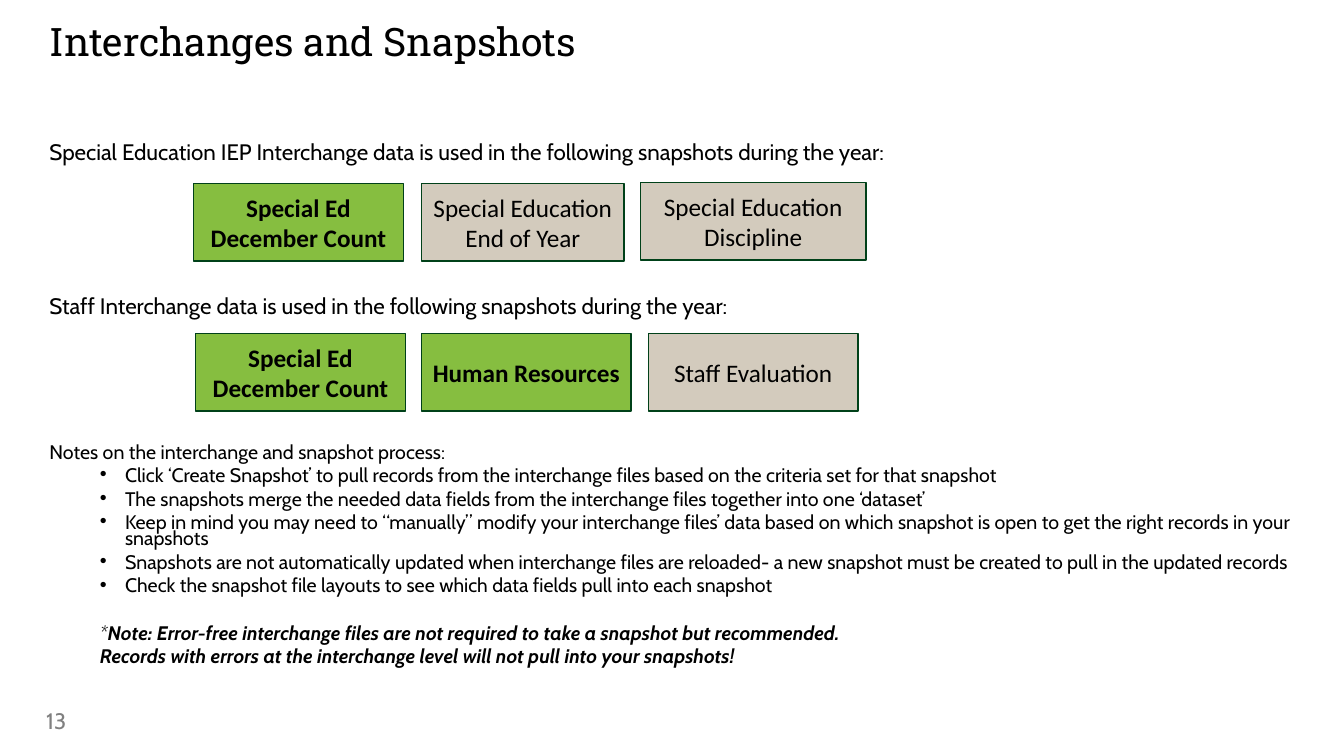
from lxml import etree
from pptx import Presentation
from pptx import util as u
from pptx.dml.color import RGBColor
from pptx.enum import shapes, text
from pptx.oxml.ns import qn

COLOURS = {"black": "000000", "grey": "808080", "green": "86BE40",
           "beige": "D3CBBD", "border": "004119"}
BOX_HEIGHT = 0.77
SNAPSHOTS = [
    (1.92, 1.82, 2.08, "Special Ed December Count", True),
    (4.18, 1.82, 2.01, "Special Education End of Year", False),
    (6.35, 1.81, 2.24, "Special Education Discipline", False),
    (1.94, 3.31, 2.08, "Special Ed December Count", True),
    (4.18, 3.31, 2.08, "Human Resources", True),
    (6.43, 3.31, 2.08, "Staff Evaluation", False),
]
NOTES = [
    "Click ‘Create Snapshot’ to pull records from the interchange files based on the criteria set for that snapshot",
    "The snapshots merge the needed data fields from the interchange files together into one ‘dataset’",
    "Keep in mind you may need to “manually” modify your interchange files’ data based on which snapshot is open "
    "to get the right records in your snapshots",
    "Snapshots are not automatically updated when interchange files are reloaded- a new snapshot must be created "
    "to pull in the updated records",
    "Check the snapshot file layouts to see which data fields pull into each snapshot",
]


def colour(name):
    """Return the named colour."""
    return RGBColor.from_string(COLOURS[name])


def add_run(paragraph, content, size=14, font="Cabin", fill="black", bold=False, italic=False):
    """Add formatted text to a paragraph."""
    run = paragraph.add_run()
    run.text = content
    run.font.size = u.Pt(size)
    run.font.name = font
    run.font.bold = bold
    run.font.italic = italic
    run.font.color.rgb = colour(fill)


def add_text_box(slide, left, top, width, height, inset=0, anchor=text.MSO_ANCHOR.TOP):
    """Add a wrapping text box and return its frame."""
    frame = slide.shapes.add_textbox(*map(u.Inches, (left, top, width, height))).text_frame
    frame.word_wrap = True
    frame.vertical_anchor = anchor
    frame.margin_left = frame.margin_right = u.Inches(inset)
    frame.margin_top = frame.margin_bottom = u.Inches(inset / 2)
    return frame


def add_line(frame, before=5, indent=0, bullet=False):
    """Return a spaced paragraph, using the empty first one if it is free."""
    paragraph = frame.paragraphs[0]
    if paragraph.runs:
        paragraph = frame.add_paragraph()
        paragraph.space_before = u.Pt(before)
    paragraph.line_spacing = 0.7
    properties = paragraph._p.get_or_add_pPr()
    properties.set("marL", str(u.Inches(indent)))
    properties.set("indent", str(u.Inches(-0.25 if bullet else 0)))
    if bullet:
        etree.SubElement(properties, qn("a:buFont"), typeface="Arial")
        etree.SubElement(properties, qn("a:buChar"), char="•")
    return paragraph


def add_snapshot(slide, left, top, width, label, highlighted):
    """Add one snapshot box, green and bold when highlighted."""
    shape = slide.shapes.add_shape(
        shapes.MSO_SHAPE.RECTANGLE, *map(u.Inches, (left, top, width, BOX_HEIGHT)))
    shape.shadow.inherit = False
    shape.fill.solid()
    shape.fill.fore_color.rgb = colour("green" if highlighted else "beige")
    shape.line.color.rgb = colour("border")
    shape.line.width = u.Pt(1)
    shape.text_frame.word_wrap = True
    shape.text_frame.vertical_anchor = text.MSO_ANCHOR.MIDDLE
    paragraph = shape.text_frame.paragraphs[0]
    paragraph.alignment = text.PP_ALIGN.CENTER
    add_run(paragraph, label, size=18, font="Calibri", bold=highlighted)


def add_body(slide):
    """Add the two headings, the bulleted notes and the closing remark."""
    frame = add_text_box(slide, 0.49, 1.44, 12.43, 5.39)
    usage = "data is used in the following snapshots during the year:"
    add_run(add_line(frame), f"Special Education IEP Interchange {usage}", size=16)
    add_run(add_line(frame, before=97), f"Staff Interchange {usage}", size=16)
    add_run(add_line(frame, before=91), "Notes on the interchange and snapshot process:")
    for note in NOTES:
        add_run(add_line(frame, indent=0.75, bullet=True), note)
    remark = add_line(frame, before=22, indent=0.5)
    add_run(remark, "*", italic=True)
    add_run(remark, "Note: Error-free interchange files are not required to take a snapshot but recommended.",
            bold=True, italic=True)
    add_run(add_line(frame, indent=0.5),
            "Records with errors at the interchange level will not pull into your snapshots!",
            bold=True, italic=True)


def main():
    """Build and save the slide."""
    presentation = Presentation()
    presentation.slide_width = u.Inches(13.33)
    presentation.slide_height = u.Inches(7.5)
    slide = presentation.slides.add_slide(presentation.slide_layouts[6])
    title = add_text_box(slide, 0.49, 0.22, 8.82, 0.98).paragraphs[0]
    title.line_spacing = 0.9
    add_run(title, "Interchanges and Snapshots", size=28, font="Roboto Slab")
    add_body(slide)
    for snapshot in SNAPSHOTS:
        add_snapshot(slide, *snapshot)
    number = add_text_box(slide, 0.36, 6.95, 3, 0.4, inset=0.1, anchor=text.MSO_ANCHOR.MIDDLE)
    add_run(number.paragraphs[0], "13", size=16, fill="grey")
    presentation.save("out.pptx")


if __name__ == "__main__":
    main()
